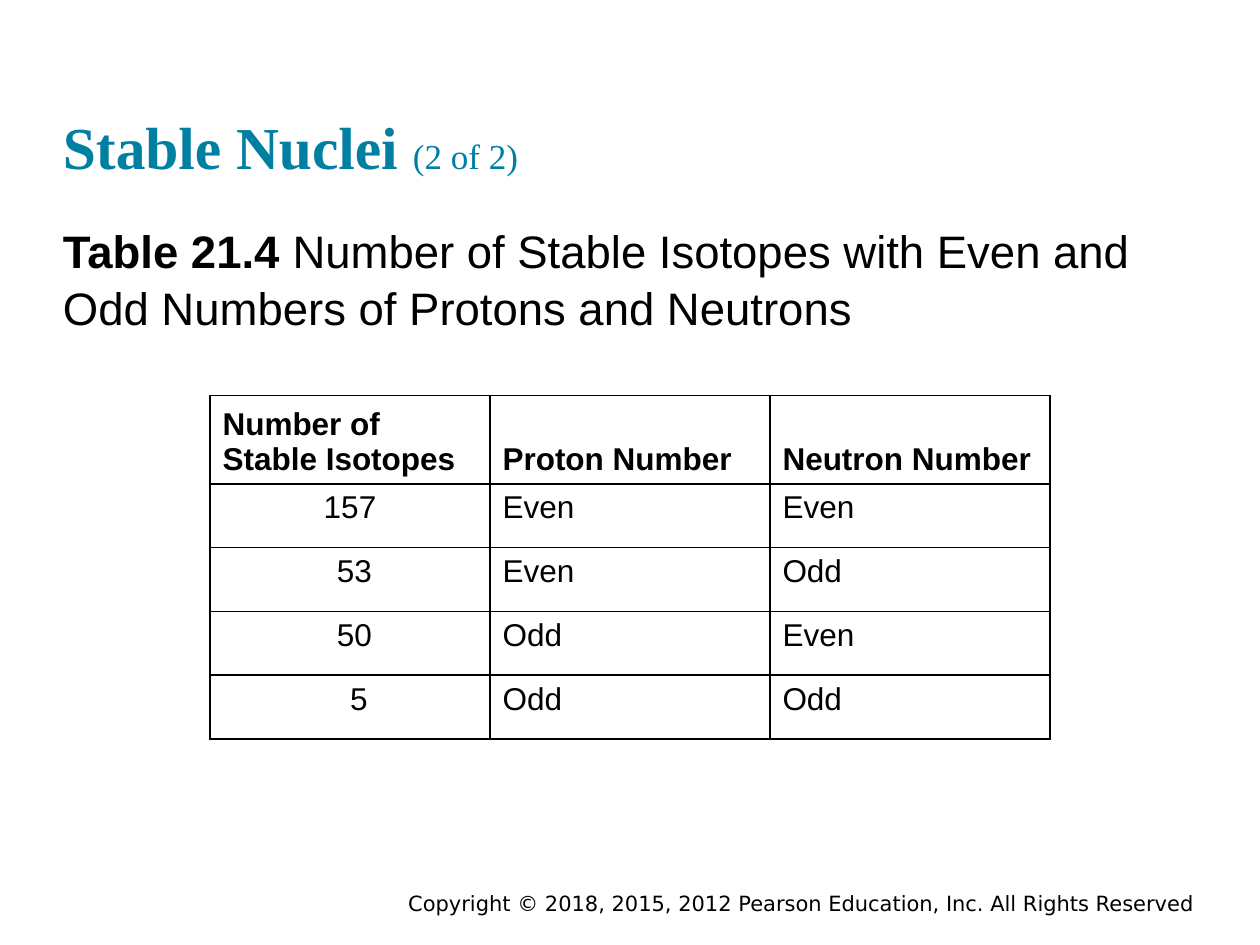
from dataclasses import dataclass

import lxml.etree
import pptx
import pptx.dml.color
import pptx.enum.text
import pptx.oxml.ns
import pptx.util

WIDTH = pptx.util.Inches(10)
HEIGHT = pptx.util.Inches(7.5)
BLACK = "000000"
TEAL = "007FA3"
ALIGN = pptx.enum.text.PP_ALIGN
ANCHOR = pptx.enum.text.MSO_ANCHOR


@dataclass
class Span:
    text: str
    size: int
    bold: bool = False
    face: str = "Arial"
    color: str = BLACK


@dataclass
class TextBlock:
    left: float
    top: float
    width: float
    height: float
    spans: list[Span]
    anchor: ANCHOR = ANCHOR.TOP
    align: ALIGN = ALIGN.LEFT
    inset: float = 0
    line_spacing: float = 1.0


@dataclass
class IsotopeRow:
    count: int
    protons: str
    neutrons: str


HEADINGS = ("Number of Stable Isotopes", "Proton Number", "Neutron Number")
ISOTOPES = [
    IsotopeRow(157, "Even", "Even"),
    IsotopeRow(53, "Even", "Odd"),
    IsotopeRow(50, "Odd", "Even"),
    IsotopeRow(5, "Odd", "Odd"),
]
BLOCKS = [
    TextBlock(0.175, 0.936, 0.783, 0.04, [
        Span("Copyright © 2018, 2015, 2012 Pearson Education, Inc. All Rights Reserved",
             12, face="DejaVu Sans"),
    ], align=ALIGN.RIGHT, inset=0.1),
    TextBlock(0.05, 0.032, 0.9, 0.16, [
        Span("Stable Nuclei ", 34, True, "Times New Roman", TEAL),
        Span("(2 of 2)", 20, False, "Times New Roman", TEAL),
    ], anchor=ANCHOR.BOTTOM),
    TextBlock(0.05, 0.233, 0.9, 0.133, [
        Span("Table 21.4", 26, True),
        Span(" Number of Stable Isotopes with Even and Odd Numbers of Protons and Neutrons", 26),
    ], line_spacing=1.05),
]


def rgb(value: str) -> pptx.dml.color.RGBColor:
    return pptx.dml.color.RGBColor.from_string(value)


def write_spans(para, spans: list[Span]) -> None:
    for span in spans:
        run = para.add_run()
        run.text = span.text
        run.font.name = span.face
        run.font.size = pptx.util.Pt(span.size)
        run.font.bold = span.bold
        run.font.color.rgb = rgb(span.color)


def draw_block(page, block: TextBlock) -> None:
    box = page.shapes.add_textbox(
        round(block.left * WIDTH), round(block.top * HEIGHT),
        round(block.width * WIDTH), round(block.height * HEIGHT))
    frame = box.text_frame
    frame.word_wrap = True
    frame.vertical_anchor = block.anchor
    frame.margin_left = frame.margin_right = pptx.util.Inches(block.inset)
    frame.margin_top = frame.margin_bottom = pptx.util.Inches(block.inset / 2)
    para = frame.paragraphs[0]
    para.alignment = block.align
    para.line_spacing = block.line_spacing
    write_spans(para, block.spans)


def draw_borders(cell) -> None:
    properties = cell._tc.get_or_add_tcPr()
    for position, side in enumerate(("lnL", "lnR", "lnT", "lnB")):
        line = lxml.etree.Element(pptx.oxml.ns.qn(f"a:{side}"), w=str(pptx.util.Pt(1)))
        fill = lxml.etree.SubElement(line, pptx.oxml.ns.qn("a:solidFill"))
        lxml.etree.SubElement(fill, pptx.oxml.ns.qn("a:srgbClr"), val=BLACK)
        properties.insert(position, line)


def draw_cell(cell, text: str, heading: bool, align: ALIGN) -> None:
    cell.fill.background()
    cell.vertical_anchor = ANCHOR.BOTTOM if heading else ANCHOR.TOP
    para = cell.text_frame.paragraphs[0]
    para.alignment = align
    write_spans(para, [Span(text, 18, heading)])
    draw_borders(cell)


def draw_table(page) -> None:
    heading_height = pptx.util.Inches(0.66)
    row_height = pptx.util.Inches(0.506)
    table_width = WIDTH * 2 // 3
    table = page.shapes.add_table(
        len(ISOTOPES) + 1, len(HEADINGS), (WIDTH - table_width) // 2,
        pptx.util.Inches(3.14), table_width,
        heading_height + row_height * len(ISOTOPES)).table
    table.rows[0].height = heading_height
    for column, heading in enumerate(HEADINGS):
        draw_cell(table.cell(0, column), heading, True, ALIGN.LEFT)
    for number, isotope in enumerate(ISOTOPES, start=1):
        table.rows[number].height = row_height
        count = str(isotope.count)
        for column, text in enumerate((count, isotope.protons, isotope.neutrons)):
            align = ALIGN.LEFT if column else ALIGN.CENTER
            draw_cell(table.cell(number, column), text, False, align)
        missing_digits = 3 - len(count)
        table.cell(number, 0).margin_left = pptx.util.Inches(0.1 + 0.07 * missing_digits)


def main() -> None:
    deck = pptx.Presentation()
    deck.slide_width = WIDTH
    deck.slide_height = HEIGHT
    page = deck.slides.add_slide(deck.slide_layouts[6])
    for block in BLOCKS:
        draw_block(page, block)
    draw_table(page)
    deck.save("out.pptx")


if __name__ == "__main__":
    main()
